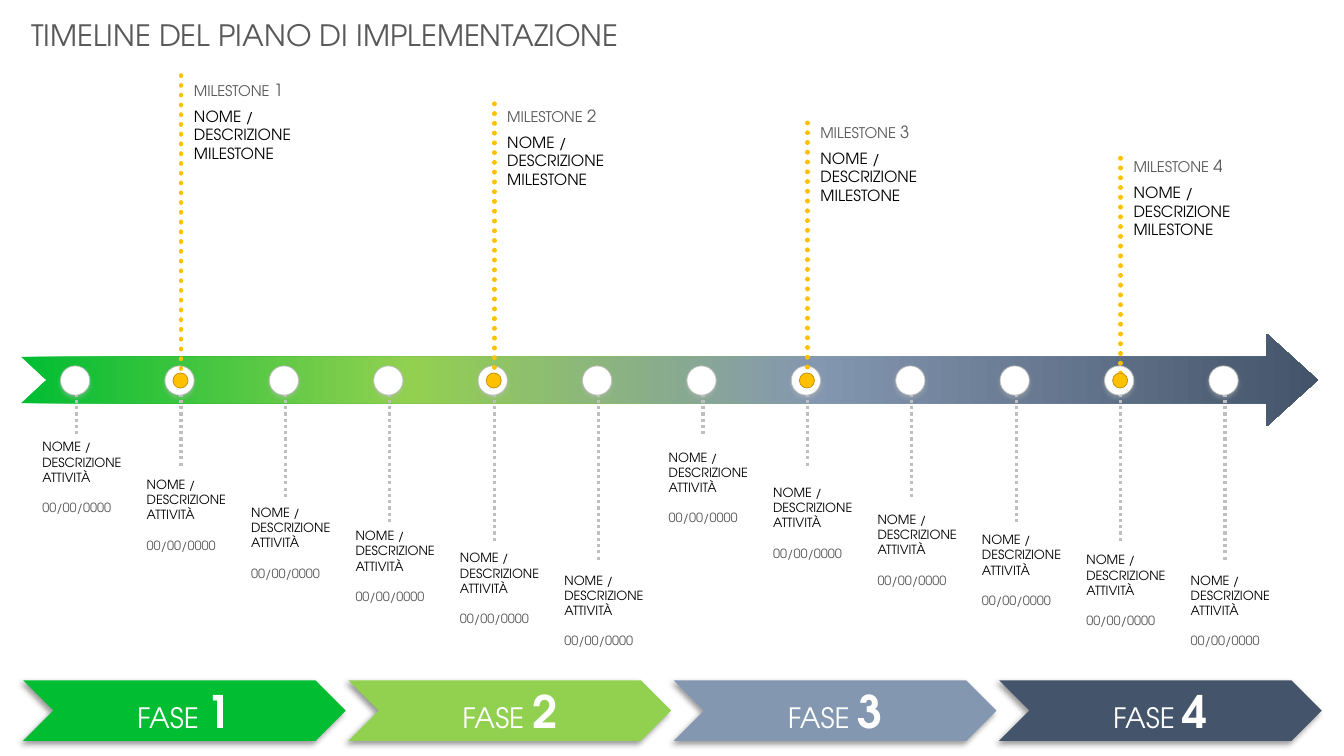
import lxml.etree
import pptx
import pptx.dml.color
import pptx.enum.dml
import pptx.enum.shapes
import pptx.enum.text
import pptx.oxml.ns
import pptx.util

Inches, Pt = pptx.util.Inches, pptx.util.Pt
RGB = pptx.dml.color.RGBColor
SHAPE = pptx.enum.shapes.MSO_SHAPE
ALIGN = pptx.enum.text.PP_ALIGN
ANCHOR = pptx.enum.text.MSO_ANCHOR
qn = pptx.oxml.ns.qn

FONT = "TeX Gyre Adventor"
GREEN = RGB(0x00, 0xBD, 0x32)
LIME = RGB(0x92, 0xD0, 0x50)
STEEL = RGB(0x84, 0x97, 0xB0)
NAVY = RGB(0x44, 0x54, 0x6A)
GOLD = RGB(0xFF, 0xC0, 0x00)
OCHRE = RGB(0xBF, 0x90, 0x00)
SILVER = RGB(0xBF, 0xBF, 0xBF)
GREY = RGB(0x59, 0x59, 0x59)
BLACK = RGB(0, 0, 0)
WHITE = RGB(0xFF, 0xFF, 0xFF)
PHASES = [GREEN, LIME, STEEL, NAVY]

# Twelve task columns, evenly spread along the arrow
COUNT = 12
FIRST, LAST = 0.76, 12.15
STEP = (LAST - FIRST) / (COUNT - 1)
STEMS = [0.55, 0.85, 1.15, 1.4, 1.6, 1.8]
TASKS = [4.31, 4.68, 4.96, 5.19, 5.41, 5.63, 4.41, 4.76, 5.03, 5.23, 5.43, 5.63]
# Each milestone: line top, label top, text width, text height
MARKS = [(0.75, 0.74, 1.71, 2.5), (1.03, 1.0, 1.68, 2.44),
         (1.22, 1.16, 1.48, 2.05), (1.57, 1.5, 1.37, 1.73)]


def style(run, size, color, bold=False):
    run.font.name = FONT
    run.font.size = Pt(size)
    run.font.color.rgb = color
    run.font.bold = bold


def shade(shape, color, alpha, blur, dist, angle):
    """Give a shape an outer shadow."""
    shape.shadow.inherit = False
    effects = shape._element.spPr.find(qn("a:effectLst"))
    outer = lxml.etree.SubElement(
        effects, qn("a:outerShdw"), blurRad=str(Pt(blur)),
        dist=str(Pt(dist)), dir=str(angle * 60000), rotWithShape="0")
    tint = lxml.etree.SubElement(outer, qn("a:srgbClr"), val=str(color))
    lxml.etree.SubElement(tint, qn("a:alpha"), val=str(alpha * 1000))


def solid(shapes, kind, box, fill, edge=None):
    shape = shapes.add_shape(kind, *map(Inches, box))
    shape.shadow.inherit = False
    shape.fill.solid()
    shape.fill.fore_color.rgb = fill
    if edge is None:
        shape.line.fill.background()
    else:
        shape.line.color.rgb = edge
        shape.line.width = Pt(0.5)
    return shape


def stem(shapes, x, top, end, color, width, cap):
    """Draw a dotted upright line."""
    line = shapes.add_connector(
        pptx.enum.shapes.MSO_CONNECTOR.STRAIGHT,
        Inches(x), Inches(top), Inches(x), Inches(end))
    line.line.color.rgb = color
    line.line.width = Pt(width)
    line.line.dash_style = pptx.enum.dml.MSO_LINE.ROUND_DOT
    props = line._element.spPr
    props.find(qn("a:ln")).set("cap", cap)
    lxml.etree.SubElement(props, qn("a:effectLst"))


def textbox(shapes, box, text):
    frame = shapes.add_textbox(*map(Inches, box)).text_frame
    frame.word_wrap = True
    frame.text = text
    return frame


def title(slide, box):
    head = slide.shapes.title
    head.left, head.top, head.width, head.height = map(Inches, box)
    frame = head.text_frame
    frame.text = "TIMELINE DEL PIANO DI IMPLEMENTAZIONE"
    frame.vertical_anchor = ANCHOR.MIDDLE
    frame.paragraphs[0].alignment = ALIGN.LEFT
    style(frame.paragraphs[0].runs[0], 21, GREY)


def phase(slide, box, number, color):
    shape = solid(slide.shapes, SHAPE.CHEVRON, box, color)
    shade(shape, BLACK, 40, 4, 3, 135)
    frame = shape.text_frame
    frame.vertical_anchor = ANCHOR.MIDDLE
    para = frame.paragraphs[0]
    para.text = "FASE "
    para.alignment = ALIGN.CENTER
    para.add_run().text = str(number)
    style(para.runs[0], 20, WHITE)
    style(para.runs[1], 32, WHITE, True)


def arrow(slide, box):
    shape = solid(slide.shapes, SHAPE.NOTCHED_RIGHT_ARROW, box, GREEN)
    shape.adjustments[1] = 0.55
    shape.fill.gradient()
    shape.fill.gradient_angle = 0
    stops = shape._element.spPr.find(qn("a:gradFill")).find(qn("a:gsLst"))
    for old in list(stops):
        stops.remove(old)
    for place, color in zip([0, 30, 61, 100], PHASES):
        stop = lxml.etree.SubElement(stops, qn("a:gs"), pos=str(place * 1000))
        lxml.etree.SubElement(stop, qn("a:srgbClr"), val=str(color))


def knob(slide, box):
    shape = solid(slide.shapes, SHAPE.OVAL, box, WHITE, SILVER)
    shade(shape, SILVER, 35, 3.1, 1.8, 90)


def task(slide, box):
    frame = textbox(slide.shapes, box, "NOME / DESCRIZIONE ATTIVITÀ")
    frame.margin_left = frame.margin_right = 0
    frame.margin_bottom = Inches(0.01)
    date = frame.add_paragraph()
    date.text = "00/00/0000"
    date.space_before = Pt(11)
    style(frame.paragraphs[0].runs[0], 9, BLACK)
    style(date.runs[0], 9, GREY)


def mark(slide, box, rise, number):
    """Group a milestone line, dot and texts; the line starts rise below the box top."""
    x, top, width, height = box
    shapes = slide.shapes.add_group_shape().shapes
    stem(shapes, x, top + rise, 3.76, GOLD, 3.5, "rnd")
    solid(shapes, SHAPE.OVAL, (x - 0.08, 3.7, 0.15, 0.15), GOLD, OCHRE)
    label = textbox(shapes, (x + 0.03, top, 1.17, 0.26), "MILESTONE").paragraphs[0]
    label.add_run().text = " "
    label.add_run().text = str(number)
    for run, size in zip(label.runs, [10.5, 11, 12]):
        style(run, size, GREY)
    name = textbox(shapes, (x + 0.03, top + 0.27, width, height),
                   "NOME / DESCRIZIONE MILESTONE")
    style(name.paragraphs[0].runs[0], 11, BLACK)


def main():
    deck = pptx.Presentation()
    deck.slide_width, deck.slide_height = Inches(13.33), Inches(7.5)
    slide = deck.slides.add_slide(deck.slide_layouts[5])
    title(slide, (0.21, 0.12, 9.2, 0.45))

    # Phase band and timeline arrow
    for i, color in enumerate(PHASES):
        phase(slide, (0.23 + i * 9.68 / 3, 6.75, 3.2, 0.6), i + 1, color)
    arrow(slide, (0.21, 3.31, 12.86, 0.92))

    # Tasks below the arrow
    cols = [FIRST + i * STEP for i in range(COUNT)]
    for i, x in enumerate(cols):
        stem(slide.shapes, x, 3.78, 3.78 + STEMS[i % len(STEMS)], SILVER, 2.25, "flat")
    for x in cols:
        knob(slide, (x - 0.16, 3.63, 0.29, 0.29))
    for x, top in zip(cols, TASKS):
        task(slide, (x - 0.34, top, 0.96, 0.9))

    # Milestones above every third column
    for i, (start, top, width, height) in enumerate(MARKS):
        mark(slide, (cols[3 * i + 1], top, width, height), start - top, i + 1)
    deck.save("out.pptx")


if __name__ == "__main__":
    main()
